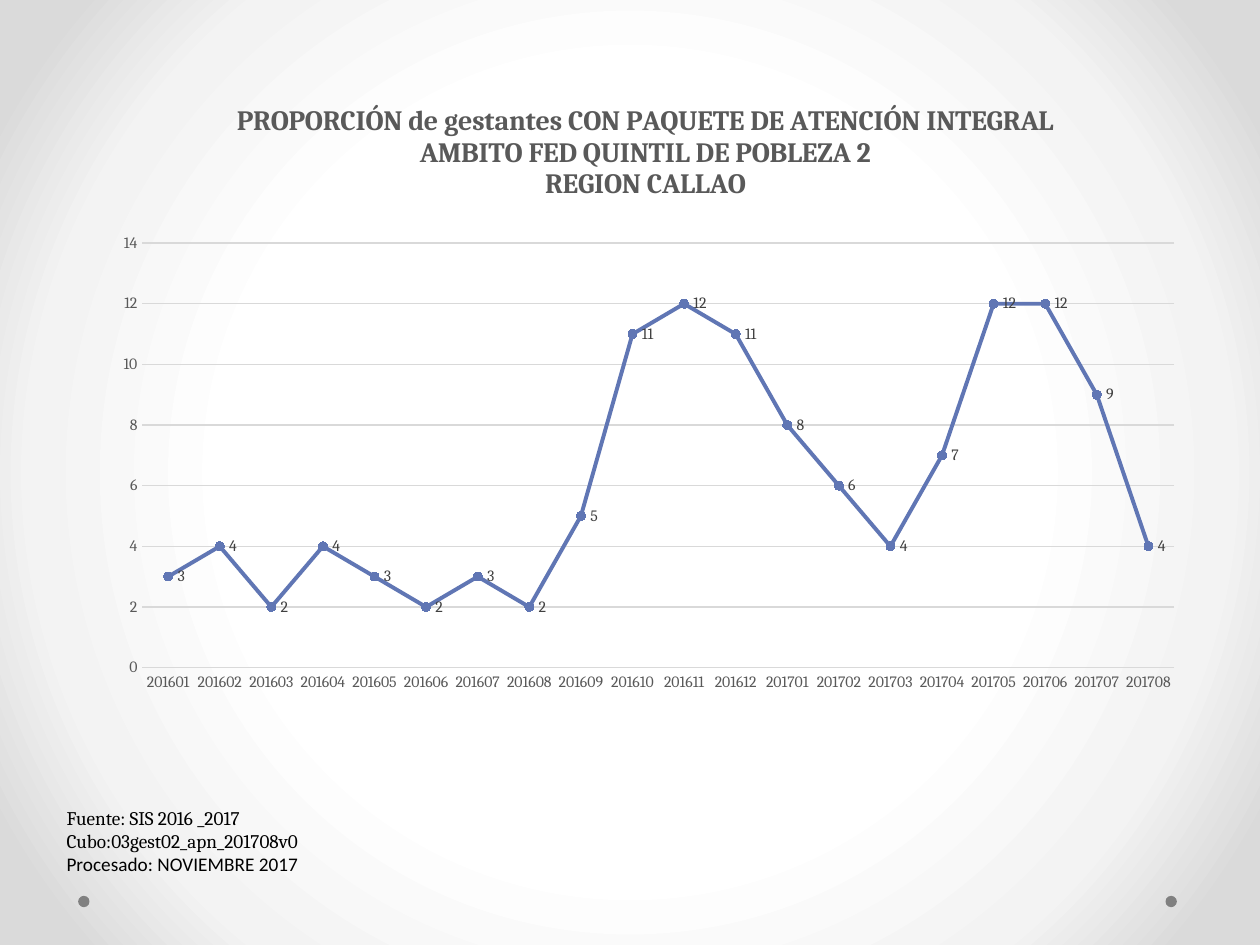
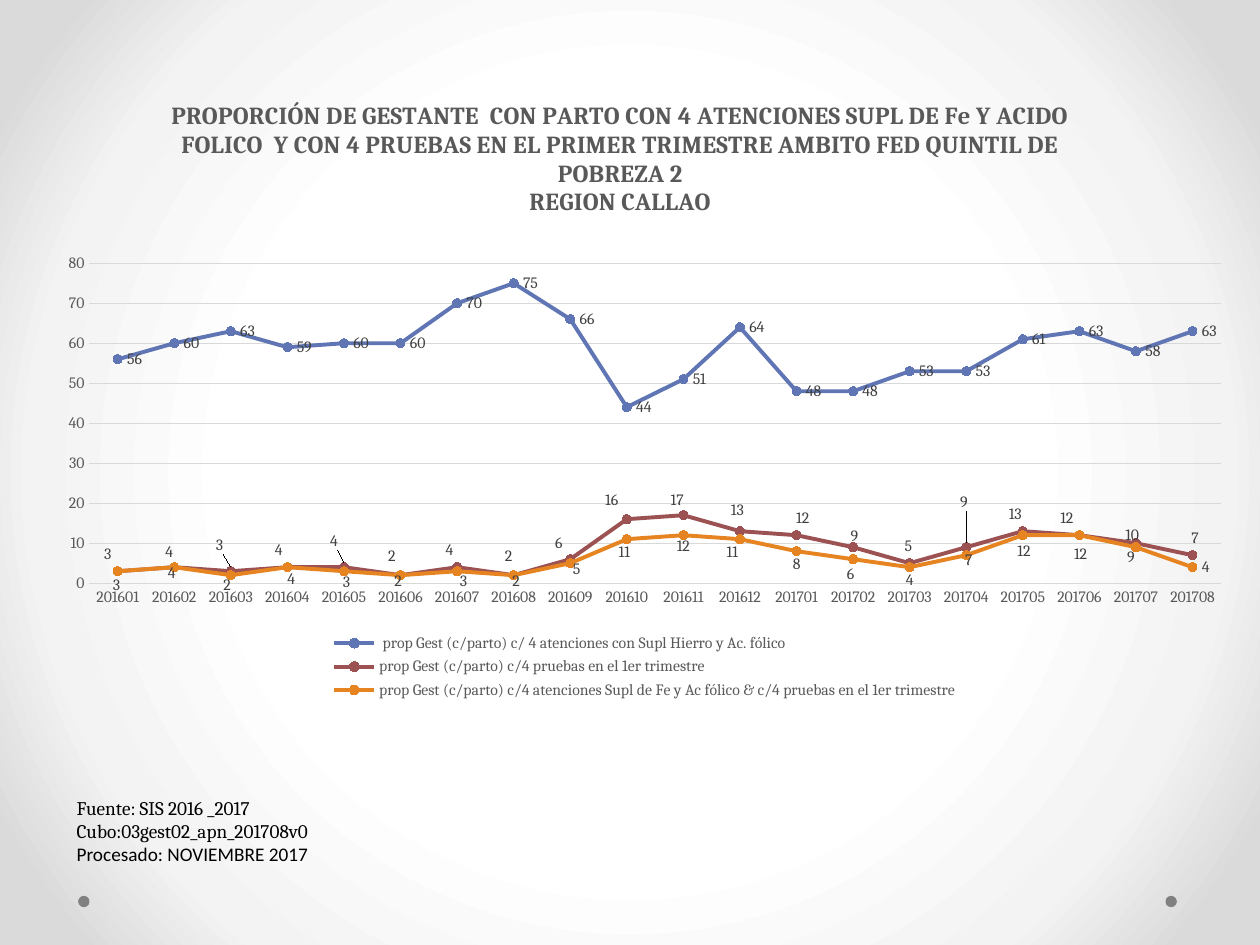
from lxml import etree
from pptx import Presentation
from pptx.chart.data import CategoryChartData
from pptx.dml.color import RGBColor
from pptx.enum.chart import XL_CHART_TYPE, XL_LABEL_POSITION, XL_LEGEND_POSITION, XL_MARKER_STYLE, XL_TICK_MARK
from pptx.enum.shapes import MSO_SHAPE
from pptx.enum.text import MSO_AUTO_SIZE
from pptx.oxml import parse_xml
from pptx.oxml.ns import nsdecls, qn
from pptx.util import Inches, Pt

LINE_MARKERS = XL_CHART_TYPE.LINE_MARKERS
RIGHT, ABOVE, BELOW = XL_LABEL_POSITION.RIGHT, XL_LABEL_POSITION.ABOVE, XL_LABEL_POSITION.BELOW
BOTTOM = XL_LEGEND_POSITION.BOTTOM
CIRCLE = XL_MARKER_STYLE.CIRCLE
NO_TICK = XL_TICK_MARK.NONE
ELLIPSE = MSO_SHAPE.OVAL
GROW = MSO_AUTO_SIZE.SHAPE_TO_FIT_TEXT

COLORS = {
    "blue": "6076B4", "red": "9C5252", "orange": "E68422",
    "black": "000000", "text": "595959", "label": "404040",
    "grid": "D9D9D9", "dot": "808080",
}
GRADIENT = [(50, "FFFFFF"), (76, "F3F3F3"), (92, "DADADA")]
FONT = "Cambria"
SOURCE_LINES = ["Fuente: SIS 2016 _2017", "Cubo:03gest02_apn_201708v0", "Procesado: NOVIEMBRE 2017"]
MONTHS = [f"{year}{month:02}" for year, last in ((2016, 12), (2017, 8)) for month in range(1, last + 1)]
BOTH_CARE = [3, 4, 2, 4, 3, 2, 3, 2, 5, 11, 12, 11, 8, 6, 4, 7, 12, 12, 9, 4]
TESTS_SHIFTS = [
    (-0.08, 0.01), (-0.04, 0.03), (-0.09, -0.06), (-0.07, 0.01), (-0.08, -0.06),
    (-0.07, 0), (-0.06, 0.01), (-0.04, 0), (-0.09, 0.02), (-0.12, 0),
    (-0.05, 0.03), (-0.02, -0.02), (0.05, 0.01), (0.01, 0.06), (-0.01, 0.01),
    (-0.02, -0.21), (-0.06, 0.01), (-0.1, 0.01), (-0.03, 0.08), (0.02, 0.01),
]
BOTH_SHIFTS = [
    (-0.01, -0.04), (-0.02, -0.1), (-0.03, -0.07), (0.03, -0.05), (0.02, -0.06),
    (-0.02, -0.1), (0.05, -0.07), (0.02, -0.1), (0.05, -0.1), (-0.02, -0.04),
    (0, -0.06), (-0.06, -0.04), (0, -0.04), (-0.02, -0.03), (0, -0.04),
    (0.02, -0.11), (0.01, -0.02), (0.01, 0), (-0.04, -0.07),
]

SLIDES = [
    {
        "title": "PROPORCIÓN de gestantes CON PAQUETE DE ATENCIÓN INTEGRAL\n"
                 "AMBITO FED QUINTIL DE POBLEZA 2\nREGION CALLAO",
        "title_size": 16, "title_at": (1.85, 0.79),
        "chart_at": (0.8, 0.76, 8.69, 4.83), "plot_at": (1.13, 1.93, 8.19, 3.37),
        "source_at": (0.43, 6.35, 3.23, 0.84), "top": 14, "step": 2, "legend": False,
        "series": [("Series 1", "blue", RIGHT, BOTH_CARE, [])],
    },
    {
        "title": "PROPORCIÓN DE GESTANTE  CON PARTO CON 4 ATENCIONES SUPL DE Fe Y ACIDO "
                 "FOLICO  Y CON 4 PRUEBAS EN EL PRIMER TRIMESTRE AMBITO FED QUINTIL DE "
                 "POBREZA 2\nREGION CALLAO",
        "title_size": 14, "title_at": (1.33, 0.76),
        "chart_at": (0.35, 0.76, 9.53, 4.83), "plot_at": (0.71, 2.09, 8.98, 2.54),
        "source_at": (0.51, 6.27, 3.23, 0.66), "top": 80, "step": 10, "legend": True,
        "series": [
            (" prop Gest (c/parto) c/ 4 atenciones con Supl Hierro y Ac. fólico", "blue", RIGHT,
             [56, 60, 63, 59, 60, 60, 70, 75, 66, 44, 51, 64, 48, 48, 53, 53, 61, 63, 58, 63], []),
            ("prop Gest (c/parto) c/4 pruebas en el 1er trimestre", "red", ABOVE,
             [3, 4, 3, 4, 4, 2, 4, 2, 6, 16, 17, 13, 12, 9, 5, 9, 13, 12, 10, 7], TESTS_SHIFTS),
            ("prop Gest (c/parto) c/4 atenciones Supl de Fe y Ac fólico & c/4 pruebas en el 1er trimestre",
             "orange", BELOW, BOTH_CARE, BOTH_SHIFTS),
        ],
    },
]


def style_font(font, size, color, name=FONT, bold=False):
    font.size = Pt(size)
    font.name = name
    font.bold = bold
    font.color.rgb = RGBColor.from_string(COLORS[color])


def place(element, index, **values):
    for old in element.findall(qn("c:layout")):
        element.remove(old)
    layout = parse_xml(f'<c:layout {nsdecls("c")}><c:manualLayout/></c:layout>')
    for tag, value in values.items():
        etree.SubElement(layout[0], qn(f"c:{tag}")).set("val", str(value))
    element.insert(index, layout)


prs = Presentation()
prs.slide_width, prs.slide_height = Inches(10), Inches(7.5)
master = prs.slide_master

stops = "".join(f'<a:gs pos="{pos * 1000}"><a:srgbClr val="{color}"/></a:gs>' for pos, color in GRADIENT)
c_sld = master._element.cSld
for old in c_sld.findall(qn("p:bg")):
    c_sld.remove(old)
c_sld.insert(0, parse_xml(
    f'<p:bg {nsdecls("p", "a")}><p:bgPr><a:gradFill rotWithShape="1"><a:gsLst>{stops}</a:gsLst>'
    '<a:path path="circle"><a:fillToRect l="50000" t="50000" r="50000" b="50000"/></a:path>'
    '</a:gradFill><a:effectLst/></p:bgPr></p:bg>'))

for data in SLIDES:
    s = prs.slides.add_slide(prs.slide_layouts[6])

    sp = s.shapes.add_textbox(*map(Inches, data["source_at"]))
    tf = sp.text_frame
    tf.word_wrap = True
    tf.auto_size = GROW
    tf.text = "\n".join(SOURCE_LINES)
    for p, name in zip(tf.paragraphs, (FONT, FONT, "Calibri")):
        style_font(p.runs[0].font, 11, "black", name)

    chart_data = CategoryChartData(number_format="0")
    chart_data.categories = MONTHS
    for name, color, position, values, shifts in data["series"]:
        chart_data.add_series(name, values)
    left, top, width, height = data["chart_at"]
    chart = s.shapes.add_chart(LINE_MARKERS, *map(Inches, data["chart_at"]), chart_data).chart
    style_font(chart.font, 10, "black")

    chart.has_title = True
    title = chart.chart_title
    title.text_frame.text = data["title"]
    for p in title.text_frame.paragraphs:
        for r in p.runs:
            style_font(r.font, data["title_size"], "text", bold=True)
    x, y = data["title_at"]
    place(title._element, 1, xMode="edge", yMode="edge", x=(x - left) / width, y=(y - top) / height)
    x, y, w, h = data["plot_at"]
    place(chart._chartSpace.chart.plotArea, 0, layoutTarget="inner", xMode="edge", yMode="edge",
          x=(x - left) / width, y=(y - top) / height, w=w / width, h=h / height)

    chart.has_legend = data["legend"]
    if data["legend"]:
        chart.legend.position = BOTTOM
        chart.legend.include_in_layout = False
        style_font(chart.legend.font, 9, "text")

    for axis in (chart.category_axis, chart.value_axis):
        axis.major_tick_mark = axis.minor_tick_mark = NO_TICK
        style_font(axis.tick_labels.font, 9, "text")
    axis.minimum_scale, axis.maximum_scale, axis.major_unit = 0, data["top"], data["step"]
    axis.tick_labels.number_format = "0"
    axis.tick_labels.number_format_is_linked = False
    axis.format.line.fill.background()
    for line in (chart.category_axis.format.line, axis.major_gridlines.format.line):
        line.color.rgb = RGBColor.from_string(COLORS["grid"])
        line.width = Pt(0.75)

    plot = chart.plots[0]
    plot.vary_by_categories = False
    for series, (name, color, position, values, shifts) in zip(plot.series, data["series"]):
        rgb = RGBColor.from_string(COLORS[color])
        series.smooth = False
        series.format.line.color.rgb = rgb
        series.format.line.width = Pt(2.25)
        marker = series.marker
        marker.style, marker.size = CIRCLE, 5
        marker.format.fill.solid()
        marker.format.fill.fore_color.rgb = rgb
        marker.format.line.color.rgb = rgb
        labels = series.data_labels
        labels.show_value = True
        labels.position = position if len(shifts) == len(values) else RIGHT
        labels.number_format = "0"
        labels.number_format_is_linked = False
        style_font(labels.font, 9, "label")
        for i, (dx, dy) in enumerate(shifts):
            label = series.points[i].data_label
            style_font(label.font, 9, "label")
            label.position = position
            place(label._dLbl, 1, x=dx / width, y=dy / height)

for i, left in enumerate((9.25, 0.62)):
    sp = s.shapes.add_shape(ELLIPSE, Inches(left), Inches(7.11), Inches(0.09), Inches(0.09))
    sp.shadow.inherit = False
    sp.fill.solid()
    sp.fill.fore_color.rgb = RGBColor.from_string(COLORS["dot"])
    sp.line.fill.background()
    sp._element.nvSpPr.cNvPr.set("id", str(20 + i))
    master.shapes._spTree.append(sp._element)

prs.save("out.pptx")
